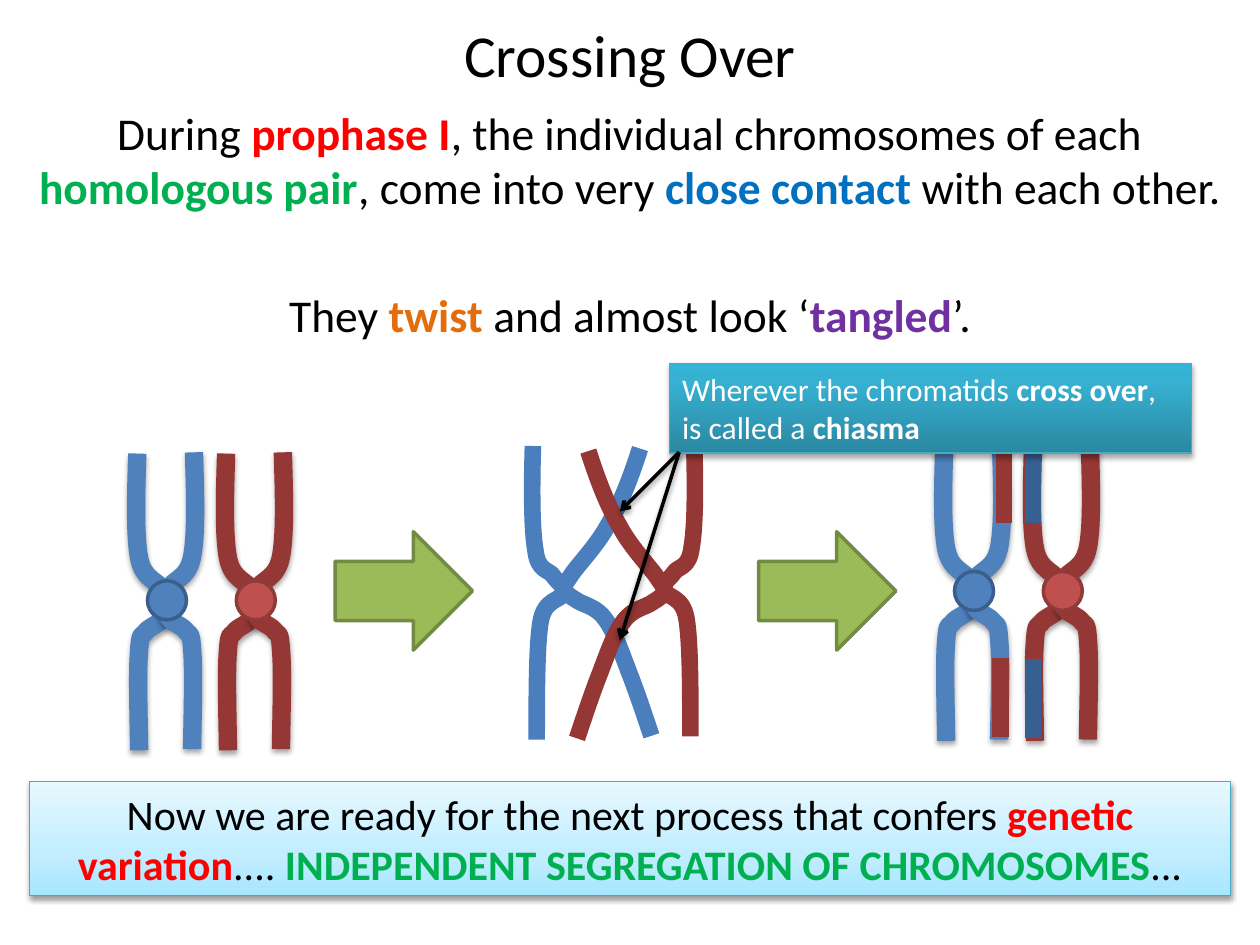
from dataclasses import dataclass

from lxml import etree
from pptx import Presentation
from pptx.dml.color import RGBColor
from pptx.enum.shapes import MSO_CONNECTOR, MSO_SHAPE
from pptx.enum.text import MSO_ANCHOR, MSO_AUTO_SIZE, PP_ALIGN
from pptx.oxml.ns import qn
from pptx.util import Inches, Pt

RECTANGLE, ELLIPSE, RIGHT_ARROW = MSO_SHAPE.RECTANGLE, MSO_SHAPE.OVAL, MSO_SHAPE.RIGHT_ARROW
STRAIGHT = MSO_CONNECTOR.STRAIGHT
LEFT, CENTER = PP_ALIGN.LEFT, PP_ALIGN.CENTER
MIDDLE, TOP = MSO_ANCHOR.MIDDLE, MSO_ANCHOR.TOP
NO_AUTOFIT = MSO_AUTO_SIZE.NONE

# The slide is a grid of 100 columns by 75 rows; all places are in grid units
COLUMNS = 100
WIDTH, HEIGHT = Inches(10), Inches(7.5)
UNIT = WIDTH / COLUMNS

FONT = "Calibri"
BLACK, WHITE, RED, GREEN = "000000", "FFFFFF", "FF0000", "00B050"
ORANGE, PURPLE, SKY = "E46C0A", "7030A0", "0070C0"
BLUE_STRAND, RED_STRAND, DARK_BLUE = "4F81BD", "953735", "376092"
TWISTED_BLUE = "4B7EBC"

Point = tuple[float, float]
Box = tuple[float, float, float, float]
Run = tuple[str, str, bool]


@dataclass(frozen=True)
class Chromosome:
    left: float
    top: float
    strand: str
    centromere: str
    outline: str


@dataclass(frozen=True)
class Panel:
    box: Box
    stops: tuple[tuple[int, str], ...]
    shadow: int
    size: int
    align: int
    runs: tuple[Run, ...]


# Curves: a start point, then three points for each cubic Bezier piece
CHROMATID = [(0.2, 0), (0.1, 3.2), (0, 6.5), (0.35, 8.3), (0.7, 10.1), (1.95, 10.1),
             (2.25, 10.9), (2.6, 11.7), (2.5, 12.4), (2.25, 13), (2.05, 13.5),
             (1.25, 13.7), (0.9, 14.1), (0.6, 14.6), (0.45, 14), (0.35, 15.6),
             (0.2, 17.2), (0.3, 20.4), (0.35, 23.55)]
OUTER_TWIST = [(42.3, 35.4), (42.2, 38.7), (42.2, 42), (42.5, 43.7), (42.7, 45.4),
               (43.6, 45.2), (43.9, 45.7), (44.3, 46.3), (44.8, 46.4), (44.7, 47.1),
               (44.5, 47.7), (43.2, 47.5), (42.9, 49.4), (42.6, 51.3), (42.6, 55),
               (42.6, 58.7)]
INNER_TWIST = [(50.8, 35.6), (50.1, 37.8), (49.3, 39.9), (48.3, 41.6), (47.4, 43.3),
               (45.8, 44.9), (45.3, 45.7), (44.7, 46.6), (44.7, 46.4), (44.8, 46.8),
               (44.9, 47.1), (45.2, 47.3), (45.7, 47.6), (46.2, 48), (47.3, 48.1),
               (48, 49.1), (48.8, 50.1), (49.5, 52.3), (50.1, 53.8), (50.7, 55.4),
               (51.2, 56.9), (51.7, 58.4)]
CHROMATID_AXIS, OUTER_AXIS, INNER_AXIS = 2.45, 48.7, 48.75

BEFORE = [Chromosome(10.7, 36, BLUE_STRAND, BLUE_STRAND, "3A5F8C"),
          Chromosome(17.75, 36, RED_STRAND, "C0504D", "8E3B39")]
AFTER = [Chromosome(74.75, 35.25, BLUE_STRAND, BLUE_STRAND, "3A5F8C"),
         Chromosome(81.8, 35.25, RED_STRAND, "C0504D", "8E3B39")]
SWAPPED_LENGTH = 6.3
SWAPPED = [(79.4, 52.2, RED_STRAND), (82, 52.3, DARK_BLUE),
           (82, 35.2, DARK_BLUE), (79.7, 35.2, RED_STRAND)]
CHIASMATA = [(49.2, 40.6), (49.2, 50.8)]
POINTER_START = (53.9, 35.9)

CALLOUT = Panel((53.15, 28.85, 41.4, 7.1), ((0, "2A88A2"), (80, "37B1D2"), (100, "34B4D6")),
                35, 18, LEFT,
                (("Wherever the chromatids ", WHITE, False), ("cross over", WHITE, True),
                 (", is called a ", WHITE, False), ("chiasma", WHITE, True)))
CONCLUSION = Panel((2.35, 62, 95.3, 9.1), ((0, "A7E6FF"), (35, "C1EDFF"), (100, "E7F8FF")),
                   38, 24, CENTER,
                   (("Now we are ready for the next process that confers ", BLACK, False),
                    ("genetic variation", RED, True), (".... ", BLACK, False),
                    ("INDEPENDENT SEGREGATION OF CHROMOSOMES", GREEN, True),
                    ("...", BLACK, False)))
BODY = [[("During ", BLACK, False), ("prophase I", RED, True),
         (", the individual chromosomes of each ", BLACK, False),
         ("homologous pair", GREEN, True), (", come into very ", BLACK, False),
         ("close contact ", SKY, True), ("with each other.", BLACK, False)],
        [("They ", BLACK, False), ("twist", ORANGE, True),
         (" and almost look ‘", BLACK, False), ("tangled", PURPLE, True),
         ("’.", BLACK, False)]]


def grid(*lengths: float) -> list[int]:
    return [round(length * UNIT) for length in lengths]


def rgb(color: str) -> RGBColor:
    return RGBColor.from_string(color)


def set_line(shape, color: str, width: float) -> None:
    shape.line.color.rgb = rgb(color)
    shape.line.width = Pt(width)


def add_shadow(effects, opacity: int) -> None:
    outer = etree.SubElement(effects, qn("a:outerShdw"), blurRad=str(Pt(3.1)),
                             dist=str(Pt(1.8)), dir="5400000", rotWithShape="0")
    color = etree.SubElement(outer, qn("a:srgbClr"), val=BLACK)
    etree.SubElement(color, qn("a:alpha"), val=str(opacity * 1000))


def set_shadow(shape, opacity: int) -> None:
    shape.shadow.inherit = False
    if opacity:
        add_shadow(shape.element.spPr.find(qn("a:effectLst")), opacity)


def write(paragraph, runs, size: int, align=CENTER) -> None:
    paragraph.alignment = align
    for text, color, bold in runs:
        run = paragraph.add_run()
        run.text = text
        run.font.name, run.font.size, run.font.bold = FONT, Pt(size), bold
        run.font.color.rgb = rgb(color)


def place(holder, box: Box, anchor) -> None:
    holder.left, holder.top, holder.width, holder.height = grid(*box)
    frame = holder.text_frame
    frame.auto_size, frame.vertical_anchor, frame.word_wrap = NO_AUTOFIT, anchor, True


def mirror(points: list[Point], axis: float, drop: float) -> list[Point]:
    return [(2 * axis - x, y + drop) for x, y in points]


def bend(strand) -> None:
    """Turn each three straight segments into one cubic Bezier piece."""
    segments = list(strand.element.iter(qn("a:lnTo")))
    for first in range(0, len(segments), 3):
        piece = segments[first:first + 3]
        curve = etree.Element(qn("a:cubicBezTo"))
        piece[0].addprevious(curve)
        for segment in piece:
            curve.append(segment[0])
            segment.getparent().remove(segment)


def draw_strand(shapes, points: list[Point], color: str, width: float, shadow: int = 0) -> None:
    start, *rest = [tuple(grid(*point)) for point in points]
    builder = shapes.build_freeform(*start)
    builder.add_line_segments(rest, close=False)
    strand = builder.convert_to_shape()
    if len(points) > 2:
        bend(strand)
    strand.fill.background()
    set_line(strand, color, width)
    set_shadow(strand, shadow)


def draw_solid(shapes, kind, box: Box, fill: str, outline: str) -> None:
    solid = shapes.add_shape(kind, *grid(*box))
    solid.fill.solid()
    solid.fill.fore_color.rgb = rgb(fill)
    set_line(solid, outline, 2)
    set_shadow(solid, 0)


def draw_chromosome(shapes, item: Chromosome) -> None:
    for half in (CHROMATID, mirror(CHROMATID, CHROMATID_AXIS, -0.1)):
        placed = [(item.left + x, item.top + y) for x, y in half]
        draw_strand(shapes, placed, item.strand, 10.5, 35)
    draw_solid(shapes, ELLIPSE, (item.left + 1, item.top + 10.1, 3.1, 3.1),
               item.centromere, item.outline)


def draw_stage_arrow(shapes, left: float) -> None:
    draw_solid(shapes, RIGHT_ARROW, (left, 42.2, 10.9, 9.4), "9BBB59", "738A42")


def draw_panel(shapes, panel: Panel) -> None:
    box = shapes.add_shape(RECTANGLE, *grid(*panel.box))
    box.fill.gradient()
    box.fill.gradient_angle = 90
    stops = box.element.spPr.find(qn("a:gradFill")).find(qn("a:gsLst"))
    stops[:] = []
    for position, color in panel.stops:
        stop = etree.SubElement(stops, qn("a:gs"), pos=str(position * 1000))
        etree.SubElement(stop, qn("a:srgbClr"), val=color)
    set_line(box, "46AAC5", 0.75)
    set_shadow(box, panel.shadow)
    box.text_frame.word_wrap = True
    write(box.text_frame.paragraphs[0], panel.runs, panel.size, panel.align)


def draw_pointer(shapes, start: Point, end: Point) -> None:
    pointer = shapes.add_connector(STRAIGHT, *grid(*start, *end))
    set_line(pointer, BLACK, 2)
    properties = pointer.element.spPr
    etree.SubElement(properties.find(qn("a:ln")), qn("a:tailEnd"), type="arrow")
    add_shadow(etree.SubElement(properties, qn("a:effectLst")), 38)


def main() -> None:
    deck = Presentation()
    deck.slide_width, deck.slide_height = WIDTH, HEIGHT
    slide = deck.slides.add_slide(deck.slide_layouts[1])
    shapes = slide.shapes

    # Title and explanation
    place(shapes.title, (5, 2.3, 90, 3.9), MIDDLE)
    write(shapes.title.text_frame.paragraphs[0], [("Crossing Over", BLACK, False)], 34)
    body = slide.placeholders[1]
    place(body, (1.55, 7.8, 96.9, 65.6), TOP)
    for index, runs in enumerate(BODY):
        paragraph = body.text_frame.add_paragraph() if index else body.text_frame.paragraphs[0]
        write(paragraph, runs, 26)
        paragraph.space_before = Pt(42 if index else 5.2)
        properties = paragraph._p.get_or_add_pPr()
        properties.set("marL", "0")
        properties.set("indent", "0")
        etree.SubElement(properties, qn("a:buNone"))

    # Homologous pair before, twisted, and after crossing over
    for item in BEFORE:
        draw_chromosome(shapes, item)
    draw_stage_arrow(shapes, 26.6)
    for color, twists in ((TWISTED_BLUE, (OUTER_TWIST, INNER_TWIST)),
                          (RED_STRAND, (mirror(INNER_TWIST, INNER_AXIS, 0.2),
                                        mirror(OUTER_TWIST, OUTER_AXIS, -0.25)))):
        for twist in twists:
            draw_strand(shapes, twist, color, 9.5)
    draw_stage_arrow(shapes, 60.2)
    for item in AFTER:
        draw_chromosome(shapes, item)
    for x, y, color in SWAPPED:
        draw_strand(shapes, [(x, y), (x, y + SWAPPED_LENGTH)], color, 9.5)

    # Callout with its pointers, and the conclusion
    draw_panel(shapes, CALLOUT)
    for chiasma in CHIASMATA:
        draw_pointer(shapes, POINTER_START, chiasma)
    draw_panel(shapes, CONCLUSION)

    deck.save("out.pptx")


if __name__ == "__main__":
    main()
